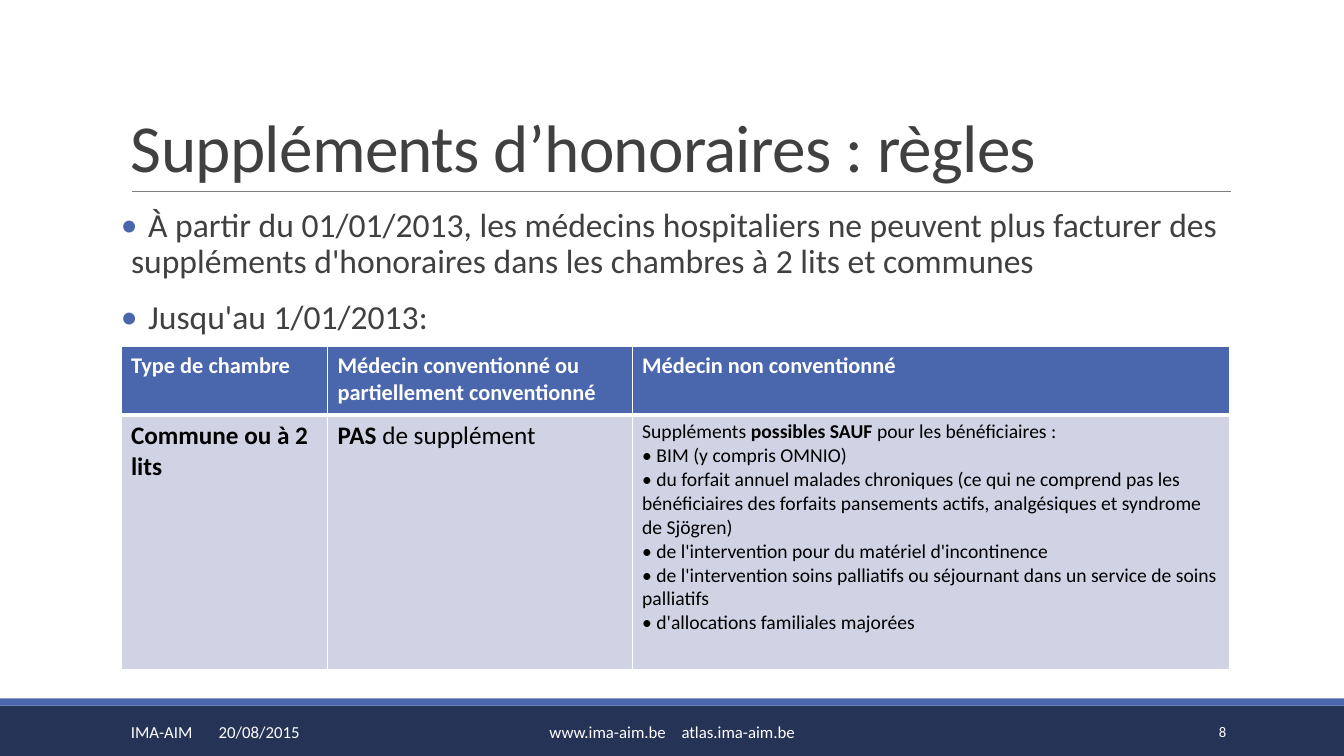
import dataclasses
import typing

import lxml.etree
import pptx
import pptx.dml.color
import pptx.enum.shapes
import pptx.enum.text
import pptx.oxml.ns
import pptx.util

Inches = pptx.util.Inches
Pt = pptx.util.Pt
Align = pptx.enum.text.PP_ALIGN
Anchor = pptx.enum.text.MSO_ANCHOR
qn = pptx.oxml.ns.qn


@dataclasses.dataclass(frozen=True)
class Theme:
    font: str = "Calibri"
    navy: str = "253356"
    blue: str = "4A66AC"
    pale: str = "D0D3E3"
    rule: str = "808080"
    text: str = "404040"
    black: str = "000000"
    white: str = "FFFFFF"
    title: float = 48
    body: float = 24
    cell: float = 18
    head: float = 16
    list: float = 14
    foot: float = 12
    page: float = 10.5


class Box(typing.NamedTuple):
    left: float
    top: float
    width: float
    height: float


class Band(typing.NamedTuple):
    box: Box
    fill: str


class Foot(typing.NamedTuple):
    left: float
    width: float
    text: str
    size: float
    inset: float = 0.1
    tab: float = 0
    align: typing.Any = Align.LEFT


class Run(typing.NamedTuple):
    text: str
    bold: bool = False


class Cell(typing.NamedTuple):
    lines: list[list[Run]]
    size: float


LOOK = Theme()

BANDS = [
    Band(Box(0, 7, 13.33, 0.5), LOOK.navy),
    Band(Box(0, 6.93, 13.33, 0.07), LOOK.blue),
]
POINTS = [
    "À partir du 01/01/2013, les médecins hospitaliers ne peuvent plus facturer des "
    "suppléments d'honoraires dans les chambres à 2 lits et communes",
    "Jusqu'au 1/01/2013:",
]
FEET = [
    Foot(1.2, 2.7, "IMA-AIM\t20/08/2015", LOOK.foot, tab=0.87),
    Foot(4.03, 5.27, "www.ima-aim.be\tatlas.ima-aim.be", LOOK.foot, 1.42, 1.31),
    Foot(10.83, 1.43, "8", LOOK.page, align=Align.RIGHT),
]
HEADS = [
    "Type de chambre",
    "Médecin conventionné ou partiellement conventionné",
    "Médecin non conventionné",
]
CASES = [
    "BIM (y compris OMNIO)",
    "du forfait annuel malades chroniques (ce qui ne comprend pas les bénéficiaires "
    "des forfaits pansements actifs, analgésiques et syndrome de Sjögren)",
    "de l'intervention pour du matériel d'incontinence",
    "de l'intervention soins palliatifs ou séjournant dans un service de soins palliatifs",
    "d'allocations familiales majorées",
]
INTRO = [Run("Suppléments "), Run("possibles SAUF ", True), Run("pour les bénéficiaires :")]
ROWS = [
    [Cell([[Run(head, True)]], LOOK.head) for head in HEADS],
    [
        Cell([[Run("Commune ou à 2 lits", True)]], LOOK.cell),
        Cell([[Run("PAS", True), Run(" de supplément")]], LOOK.cell),
        Cell([INTRO] + [[Run("• " + case)] for case in CASES], LOOK.list),
    ],
]
WIDTHS = [2.05, 3.02, 5.93]
HEIGHTS = [0.68, 2.52]


def color(code: str) -> pptx.dml.color.RGBColor:
    return pptx.dml.color.RGBColor.from_string(code)


def place(box: Box) -> list[int]:
    return [Inches(side) for side in box]


def style(para: typing.Any, size: float, ink: str) -> None:
    para.font.name = LOOK.font
    para.font.size = Pt(size)
    para.font.color.rgb = color(ink)


def add_tab(para: typing.Any, stop: float) -> None:
    tabs = lxml.etree.SubElement(para._p.get_or_add_pPr(), qn("a:tabLst"))
    lxml.etree.SubElement(tabs, qn("a:tab"), pos=str(Inches(stop)), algn="l")


def add_dot(para: typing.Any) -> None:
    props = para._p.get_or_add_pPr()
    props.set("marL", str(Inches(0.1)))
    props.set("indent", str(-Inches(0.1)))
    tint = lxml.etree.SubElement(props, qn("a:buClr"))
    lxml.etree.SubElement(tint, qn("a:srgbClr"), val=LOOK.blue)
    lxml.etree.SubElement(props, qn("a:buFont"), typeface=LOOK.font)
    lxml.etree.SubElement(props, qn("a:buChar"), char="•")


def add_text(slide: typing.Any, box: Box, anchor: typing.Any) -> typing.Any:
    frame = slide.shapes.add_textbox(*place(box)).text_frame
    frame.word_wrap = True
    frame.vertical_anchor = anchor
    return frame


def add_band(slide: typing.Any, band: Band) -> None:
    kind = pptx.enum.shapes.MSO_SHAPE.RECTANGLE
    shape = slide.shapes.add_shape(kind, *place(band.box))
    shape.shadow.inherit = False
    shape.fill.solid()
    shape.fill.fore_color.rgb = color(band.fill)
    shape.line.fill.background()


def add_rule(slide: typing.Any) -> None:
    kind = pptx.enum.shapes.MSO_CONNECTOR.STRAIGHT
    ends = place(Box(1.31, 1.9, 12.21, 1.9))
    line = slide.shapes.add_connector(kind, *ends)
    line.line.color.rgb = color(LOOK.rule)
    line.line.width = Pt(0.5)
    lxml.etree.SubElement(line._element.spPr, qn("a:effectLst"))


def add_title(slide: typing.Any) -> None:
    para = add_text(slide, Box(1.2, 0.31, 11, 1.59), Anchor.BOTTOM).paragraphs[0]
    run = para.add_run()
    run.text = "Suppléments d’honoraires : règles"
    para.line_spacing = 0.85
    style(para, LOOK.title, LOOK.text)
    run._r.get_or_add_rPr().set("spc", "-50")


def add_body(slide: typing.Any) -> None:
    frame = add_text(slide, Box(1.2, 2.02, 11, 1.4), Anchor.TOP)
    frame.margin_left = frame.margin_right = 0
    for i, point in enumerate(POINTS):
        para = frame.add_paragraph() if i else frame.paragraphs[0]
        para.text = "\t" + point
        para.line_spacing = 0.9
        para.space_before = Pt(12 if i else 0)
        para.space_after = Pt(2)
        add_dot(para)
        add_tab(para, 0.27)
        style(para, LOOK.body, LOOK.text)


def add_foot(slide: typing.Any, foot: Foot) -> None:
    frame = add_text(slide, Box(foot.left, 7.06, foot.width, 0.4), Anchor.MIDDLE)
    frame.margin_left = Inches(foot.inset)
    para = frame.paragraphs[0]
    para.text = foot.text
    para.alignment = foot.align
    if foot.tab:
        add_tab(para, foot.tab)
    style(para, foot.size, LOOK.white)


def fill_cell(cell: typing.Any, data: Cell, head: bool) -> None:
    # Borders come before the fill in the cell properties
    props = cell._tc.get_or_add_tcPr()
    for side in ("lnL", "lnR", "lnT", "lnB"):
        width = Pt(3 if head and side == "lnB" else 1)
        edge = lxml.etree.SubElement(props, qn("a:" + side), w=str(width))
        paint = lxml.etree.SubElement(edge, qn("a:solidFill"))
        lxml.etree.SubElement(paint, qn("a:srgbClr"), val=LOOK.white)
    cell.fill.solid()
    cell.fill.fore_color.rgb = color(LOOK.blue if head else LOOK.pale)
    for i, line in enumerate(data.lines):
        para = cell.text_frame.add_paragraph() if i else cell.text_frame.paragraphs[0]
        style(para, data.size, LOOK.white if head else LOOK.black)
        for part in line:
            run = para.add_run()
            run.text = part.text
            run.font.bold = part.bold


def add_grid(slide: typing.Any) -> None:
    box = Box(1.2, 3.44, sum(WIDTHS), sum(HEIGHTS))
    table = slide.shapes.add_table(len(ROWS), len(WIDTHS), *place(box)).table
    for col, width in zip(table.columns, WIDTHS):
        col.width = Inches(width)
    for r, (row, height) in enumerate(zip(ROWS, HEIGHTS)):
        table.rows[r].height = Inches(height)
        for c, data in enumerate(row):
            fill_cell(table.cell(r, c), data, r == 0)


def main() -> None:
    deck = pptx.Presentation()
    deck.slide_width, deck.slide_height = Inches(13.33), Inches(7.5)
    slide = deck.slides.add_slide(deck.slide_layouts[6])
    # Frame of the page
    for band in BANDS:
        add_band(slide, band)
    add_rule(slide)
    # Content
    add_title(slide)
    add_body(slide)
    add_grid(slide)
    # Footer
    for foot in FEET:
        add_foot(slide, foot)
    deck.save("out.pptx")


if __name__ == "__main__":
    main()
